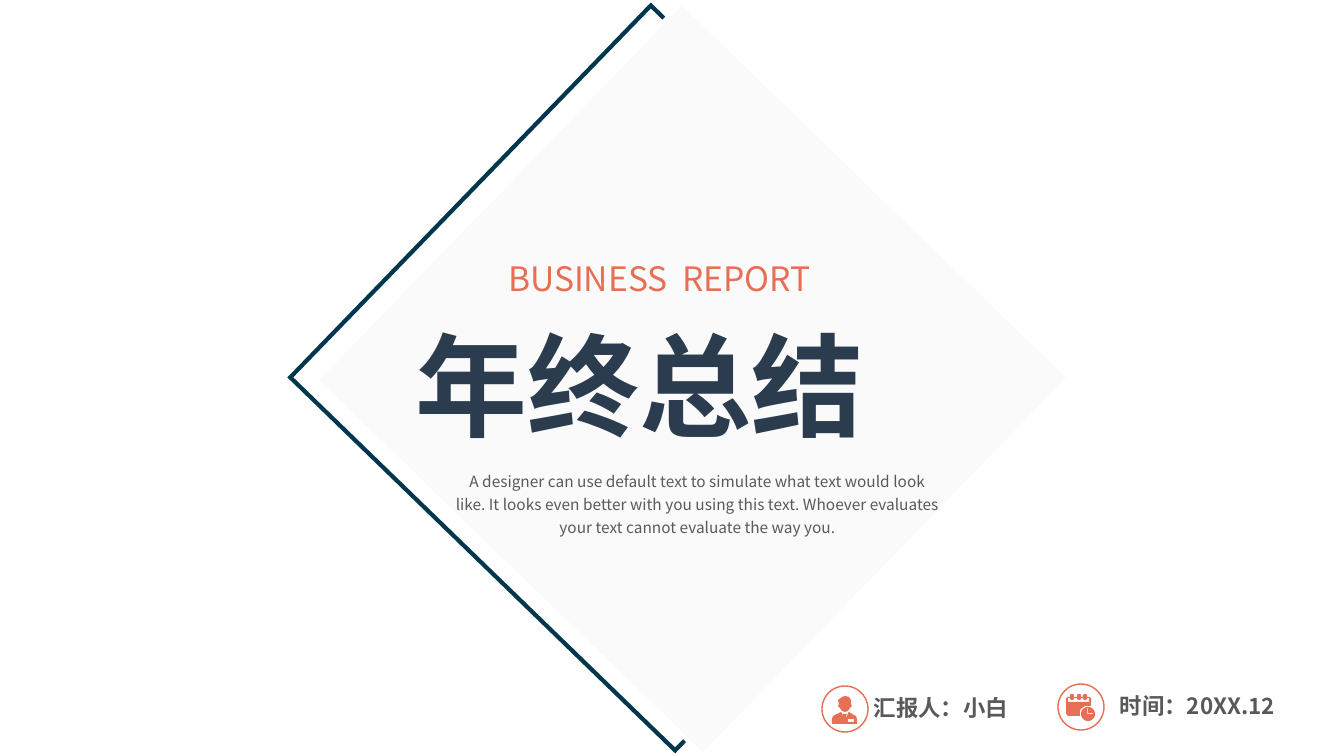
import math

import lxml.etree
import pptx
import pptx.dml.color
import pptx.enum.shapes
import pptx.enum.text
import pptx.oxml.ns
import pptx.util

RGBColor = pptx.dml.color.RGBColor
ALIGN = pptx.enum.text.PP_ALIGN
SHAPES = pptx.enum.shapes.MSO_SHAPE

NAVY = RGBColor(0x00, 0x37, 0x4C)
SLATE = RGBColor(0x2A, 0x3C, 0x4D)
CORAL = RGBColor(0xE6, 0x70, 0x54)
GREY = RGBColor(0x59, 0x59, 0x59)
PALE = RGBColor(0xFA, 0xFA, 0xFA)
WHITE = RGBColor(0xFF, 0xFF, 0xFF)

FONT = "Noto Sans CJK SC"
PX = 914400 / 100.8
SLIDE_SIZE = (1344, 756)
TILT = 44.1
ICON_GRID = 10  # freeform units per px

# Content: text with its box (left, top, width, height)
HEADING = ("年终总结", (405, 311, 563, 146))
KICKER = ("BUSINESS  REPORT", (462, 253, 395, 50))
INTRO = (
    "A designer can use default text to simulate what text would look like. "
    "It looks even better with you using this text. "
    "Whoever evaluates your text cannot evaluate the way you.",
    (444, 462, 507, 81),
)

# Diamonds: box, fill, line
DIAMONDS = [
    ((395, 119, 536, 518), None, NAVY),
    ((423, 116, 539, 526), PALE, WHITE),
]

# Icon outlines in px, measured from the icon's corner
PERSON = [
    [(13, 0), (17, 1), (19, 4), (19, 8), (20, 10), (18, 12), (16, 15), (13, 16),
     (10, 15), (8, 12), (6, 10), (7, 8), (6, 4), (9, 2), (10, 1)],
    [(9, 16), (10, 17), (11, 21), (11, 18), (15, 18), (14, 20), (15, 21), (16, 17),
     (17, 16), (22, 19), (24, 20), (25, 23), (25, 28), (0, 28), (0, 23), (1, 20), (3, 19)],
    [(16, 23), (22, 23), (22, 26), (16, 26)],
]
RING_LEFTS = (4, 11, 17)
CLOCK = (22, 20, 7)  # centre x, centre y, radius
CLOCK_HANDS = [(21, 14), (22, 14), (22, 19), (27, 19), (27, 20), (21, 20)]


def calendar_contours():
    tabs, slots = [], []
    for left in RING_LEFTS:
        right = left + 4
        tabs += [(left, 3), (left, 1), (left + 1, 0), (right - 1, 0), (right, 1), (right, 3)]
        slots += [(left, 4), (left, 5), (left + 1, 6), (right - 1, 6), (right, 5), (right, 4)]
    page = [(0, 4), (2, 3)] + tabs + [
        (23, 3), (25, 4), (25, 12), (19, 12), (16, 14), (14, 16), (14, 22), (2, 22), (0, 20)]
    header = [(2, 4)] + slots + [(23, 4), (23, 8), (2, 8)]
    x, y, radius = CLOCK
    turns = [math.tau * step / 32 for step in range(32)]
    dial = [(x + radius * math.cos(turn), y + radius * math.sin(turn)) for turn in turns]
    return [page, header, dial, CLOCK_HANDS]


# Footer: circle corner, icon corner, contours, label, label box
FOOTER = [
    ((822, 686), (832, 696), PERSON, "汇报人：小白", (864, 689, 156, 37)),
    ((1058, 684), (1066, 694), calendar_contours(), "时间：20XX.12", (1110, 687, 181, 37)),
]
CIRCLE = 46


def emu(*lengths):
    return [round(length * PX) for length in lengths]


def style(shape, fill=None, line=None, width=1):
    shape.shadow.inherit = False
    if fill is None:
        shape.fill.background()
    else:
        shape.fill.solid()
        shape.fill.fore_color.rgb = fill
    if line is None:
        shape.line.fill.background()
    else:
        shape.line.color.rgb = line
        shape.line.width = pptx.util.Pt(width)


def write(shape, text, box, size, color, bold=False, align=ALIGN.LEFT,
          wrap=True, line_spacing=1.0, space_after=0):
    shape.left, shape.top, shape.width, shape.height = emu(*box)
    frame = shape.text_frame
    frame.word_wrap = wrap
    frame.vertical_anchor = pptx.enum.text.MSO_ANCHOR.TOP
    frame.auto_size = pptx.enum.text.MSO_AUTO_SIZE.SHAPE_TO_FIT_TEXT
    paragraph = frame.paragraphs[0]
    paragraph.alignment = align
    paragraph.line_spacing = line_spacing
    paragraph.space_before = pptx.util.Pt(0)
    paragraph.space_after = pptx.util.Pt(space_after)
    run = paragraph.add_run()
    run.text = text
    run.font.size = pptx.util.Pt(size)
    run.font.bold = bold
    run.font.color.rgb = color
    run.font.name = FONT
    # East Asian glyphs need their own typeface entry
    lxml.etree.SubElement(run.font._element, pptx.oxml.ns.qn("a:ea"), typeface=FONT)


def add_diamond(slide, box, fill, line):
    shape = slide.shapes.add_shape(SHAPES.RECTANGLE, *emu(*box))
    shape.rotation = TILT
    style(shape, fill, line, 3)
    lxml.etree.SubElement(shape.line._get_or_add_ln(), pptx.oxml.ns.qn("a:miter"), lim="800000")
    return shape


def add_icon(slide, corner, contours):
    grid = [[(x * ICON_GRID, y * ICON_GRID) for x, y in contour] for contour in contours]
    builder = slide.shapes.build_freeform(*grid[0][0], scale=PX / ICON_GRID)
    for index, contour in enumerate(grid):
        if index:
            builder.move_to(*contour[0])
        builder.add_line_segments(contour[1:], close=True)
    style(builder.convert_to_shape(*emu(*corner)), CORAL)


def main():
    presentation = pptx.Presentation()
    presentation.slide_width, presentation.slide_height = emu(*SLIDE_SIZE)
    slide = presentation.slides.add_slide(presentation.slide_layouts[0])

    # Diamonds go behind the placeholders
    title, subtitle = slide.placeholders
    for diamond in DIAMONDS:
        title._element.addprevious(add_diamond(slide, *diamond)._element)

    # Centre text
    kicker = slide.shapes.add_textbox(0, 0, 0, 0)
    write(kicker, *KICKER, 24, CORAL, align=ALIGN.CENTER)
    write(title, *HEADING, 80, SLATE, bold=True, align=ALIGN.JUSTIFY)
    write(subtitle, *INTRO, 11, GREY, align=ALIGN.CENTER, line_spacing=1.25, space_after=8)

    # Footer: presenter and date
    for circle_corner, icon_corner, contours, label, box in FOOTER:
        circle = slide.shapes.add_shape(SHAPES.OVAL, *emu(*circle_corner, CIRCLE, CIRCLE))
        style(circle, line=CORAL)
        add_icon(slide, icon_corner, contours)
        write(slide.shapes.add_textbox(0, 0, 0, 0), label, box, 16, GREY, bold=True, wrap=False)

    presentation.save("out.pptx")


if __name__ == "__main__":
    main()
